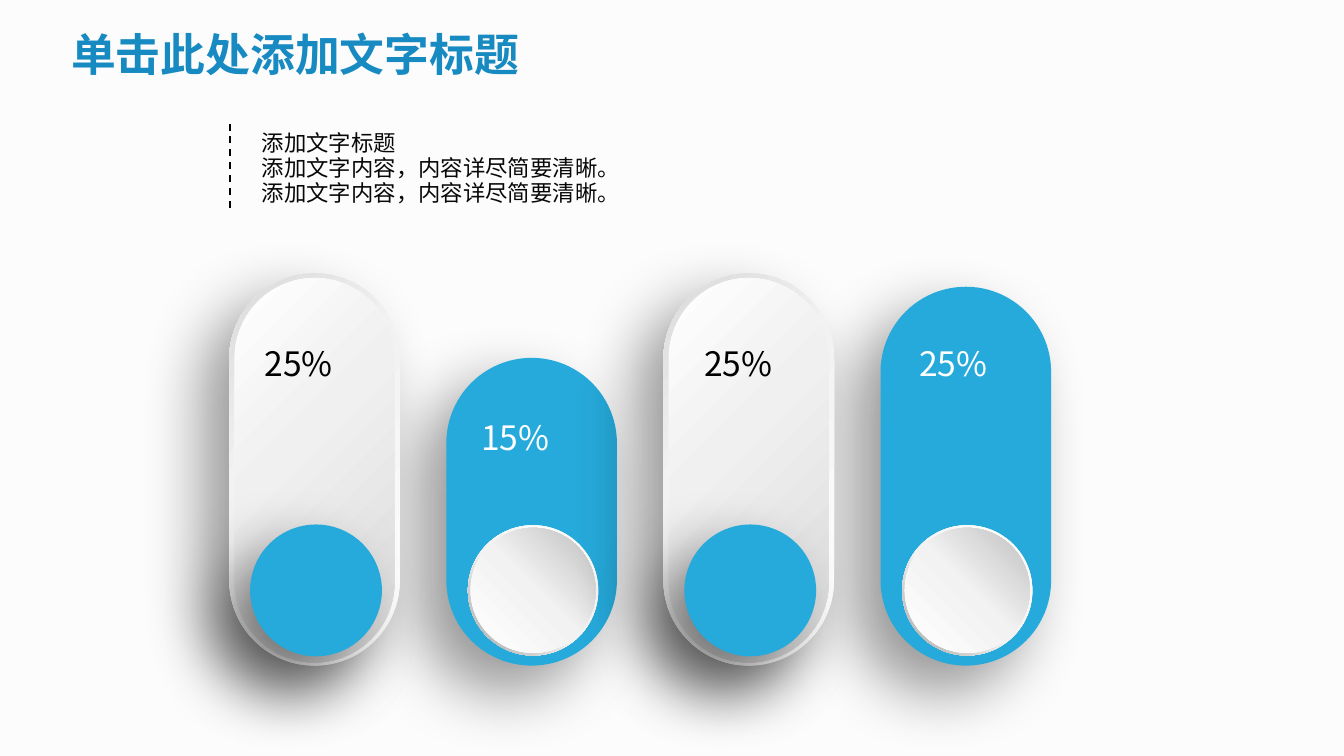
from dataclasses import dataclass

from lxml.etree import SubElement
from pptx import Presentation
from pptx.dml.color import RGBColor
from pptx.enum.dml import MSO_LINE
from pptx.enum.shapes import MSO_CONNECTOR, MSO_SHAPE
from pptx.oxml.ns import qn
from pptx.shapes.base import BaseShape
from pptx.util import Pt


@dataclass(frozen=True)
class Theme:
    font: str = "Noto Sans CJK SC"
    background: str = "FCFCFC"
    title: str = "178AC1"
    accent: str = "26AADB"
    body: str = "080808"
    dark: str = "000000"
    light: str = "FFFFFF"
    title_size: float = 24
    value_size: float = 18
    body_size: float = 12


@dataclass(frozen=True)
class Gradient:
    stops: tuple[tuple[int, str], ...]
    angle: int


@dataclass(frozen=True)
class Pill:
    column: int
    value: str
    height: float
    raised: bool


@dataclass(frozen=True)
class Label:
    lines: tuple[str, ...]
    left: float
    top: float
    width: float
    height: float
    size: float
    leading: float
    color: str
    bold: bool = False


THEME = Theme()
PILL_RIM = Gradient(((0, "FFFFFF"), (62, "F2F2F2"), (100, "D9D9D9")), 135)
PILL_FACE = Gradient(((0, "FFFFFF"), (42, "F0F0F0"), (100, "D9D9D9")), 315)
KNOB_RIM = Gradient(((0, "FFFFFF"), (55, "F2F2F2"), (100, "A6A6A6")), 135)
KNOB_FACE = Gradient(((0, "FFFFFF"), (51, "F2F2F2"), (100, "BFBFBF")), 315)

FIRST_CENTER, PITCH = 168.5, 116.3
PILL_BOTTOM, PILL_WIDTH = 356.6, 91.4
KNOB_OFFSET, KNOB_MIDDLE = 0.8, 316.3

PILLS = (
    Pill(1, "15%", 164.9, False),
    Pill(0, "25%", 210.2, True),
    Pill(3, "25%", 203, False),
    Pill(2, "25%", 210.2, True),
)
VALUE_LEFTS = (134.6, 250.6, 370.1, 485.3)
VALUE_TOPS = (179.3, 218.9, 179.3, 179.3)

LABELS = (
    Label(("单击此处添加文字标题",), 31, 9.4, 257, 36, THEME.title_size, 30, THEME.title, True),
    Label(("添加文字标题",), 133.2, 65.5, 87, 21.6, THEME.body_size, 14.4, THEME.body),
    Label(("添加文字内容，内容详尽简要清晰。",) * 2, 133.2, 79.8, 208, 36,
          THEME.body_size, 13.5, THEME.body),
)


def paint(shape: BaseShape, fill: str | Gradient) -> None:
    shape.shadow.inherit = False
    shape.line.fill.background()
    if isinstance(fill, str):
        shape.fill.solid()
        shape.fill.fore_color.rgb = RGBColor.from_string(fill)
        return
    shape.fill.gradient()
    gradient = shape._element.spPr.find(qn("a:gradFill"))
    gradient.set("rotWithShape", "1")
    stops = gradient.find(qn("a:gsLst"))
    for stop in list(stops):
        stops.remove(stop)
    for position, color in fill.stops:
        stop = SubElement(stops, qn("a:gs"), pos=str(position * 1000))
        SubElement(stop, qn("a:srgbClr"), val=color)
    gradient.find(qn("a:lin")).set("ang", str(fill.angle * 60000))


def cast_shadow(shape: BaseShape, opacity: int) -> None:
    effects = shape._element.spPr.find(qn("a:effectLst"))
    shadow = SubElement(effects, qn("a:outerShdw"), blurRad=str(Pt(35)), dist=str(Pt(20)),
                        dir=str(135 * 60000), algn="tr", rotWithShape="0")
    color = SubElement(shadow, qn("a:srgbClr"), val=THEME.dark)
    SubElement(color, qn("a:alpha"), val=str(opacity * 1000))


def add_centered(shapes, kind: MSO_SHAPE, center: float, middle: float,
                 width: float, height: float, fill: str | Gradient) -> BaseShape:
    shape = shapes.add_shape(kind, Pt(center - width / 2), Pt(middle - height / 2),
                             Pt(width), Pt(height))
    paint(shape, fill)
    return shape


def add_capsule(shapes, center: float, middle: float, length: float,
                thickness: float, fill: str | Gradient) -> BaseShape:
    capsule = add_centered(shapes, MSO_SHAPE.ROUNDED_RECTANGLE, center, middle,
                           length, thickness, fill)
    capsule.adjustments[0] = 0.5
    capsule.rotation = 90
    return capsule


def add_pill(page, pill: Pill) -> None:
    center = FIRST_CENTER + PITCH * pill.column
    middle = PILL_BOTTOM - pill.height / 2
    knob_center = center + KNOB_OFFSET
    if pill.raised:
        body = page.shapes.add_group_shape().shapes
        capsule = add_capsule(body, center, middle, pill.height, PILL_WIDTH, PILL_RIM)
        cast_shadow(capsule, 40)
        add_capsule(body, center, middle + 0.4, 206, 85.6, PILL_FACE)
        knob = add_centered(page.shapes, MSO_SHAPE.OVAL, knob_center, KNOB_MIDDLE,
                            70.6, 70.6, THEME.accent)
        cast_shadow(knob, 50)
    else:
        capsule = add_capsule(page.shapes, center, middle, pill.height, PILL_WIDTH, THEME.accent)
        cast_shadow(capsule, 40)
        knob = page.shapes.add_group_shape().shapes
        rim = add_centered(knob, MSO_SHAPE.DONUT, knob_center, KNOB_MIDDLE, 69.8, 69.8, KNOB_RIM)
        rim.adjustments[0] = 0.049
        add_centered(knob, MSO_SHAPE.OVAL, knob_center, KNOB_MIDDLE, 67, 67, KNOB_FACE)


def add_label(page, label: Label) -> None:
    box = page.shapes.add_textbox(Pt(label.left), Pt(label.top), Pt(label.width), Pt(label.height))
    frame = box.text_frame
    frame.word_wrap = False
    frame.text = "\n".join(label.lines)
    for para in frame.paragraphs:
        para.line_spacing = Pt(label.leading)
        para.font.size = Pt(label.size)
        para.font.bold = label.bold
        para.font.color.rgb = RGBColor.from_string(label.color)
        para.font.name = THEME.font
        SubElement(para._p.pPr.find(qn("a:defRPr")), qn("a:ea"), typeface=THEME.font)


def add_dashed_rule(page) -> None:
    rule = page.shapes.add_connector(MSO_CONNECTOR.STRAIGHT, Pt(123.1), Pt(111.6),
                                     Pt(123.1), Pt(66.2))
    rule.line.color.rgb = RGBColor.from_string(THEME.dark)
    rule.line.width = Pt(1)
    rule.line.dash_style = MSO_LINE.DASH
    SubElement(rule._element.spPr, qn("a:effectLst"))


def main() -> None:
    deck = Presentation()
    deck.slide_width, deck.slide_height = Pt(720), Pt(405)
    page = deck.slides.add_slide(deck.slide_layouts[6])
    page.background.fill.solid()
    page.background.fill.fore_color.rgb = RGBColor.from_string(THEME.background)
    for pill in PILLS:
        add_pill(page, pill)
    for pill in PILLS:
        add_label(page, Label((pill.value,), VALUE_LEFTS[pill.column], VALUE_TOPS[pill.column],
                              51.8, 28.8, THEME.value_size, 22.5,
                              THEME.dark if pill.raised else THEME.light))
    for label in LABELS:
        add_label(page, label)
    add_dashed_rule(page)
    deck.save("out.pptx")


if __name__ == "__main__":
    main()
